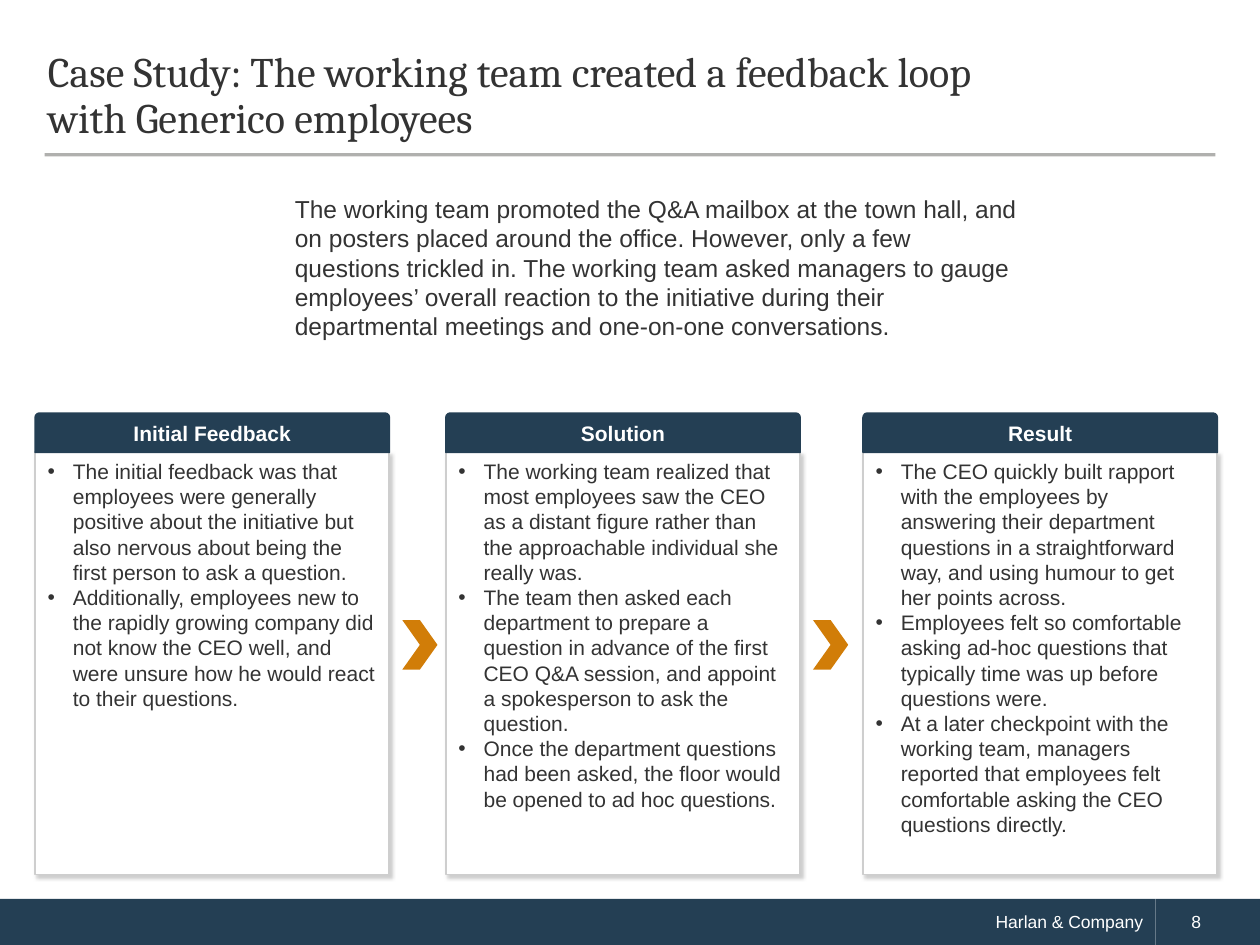
from lxml import etree
from pptx import Presentation
from pptx.dml.color import RGBColor
from pptx.enum import shapes, text
from pptx.oxml import parse_xml
from pptx.oxml.ns import qn
from pptx.util import Cm, Pt

NAVY = RGBColor(0x24, 0x3F, 0x54)
ORANGE = RGBColor(0xD1, 0x7D, 0x08)
INK = RGBColor(0x33, 0x33, 0x33)
RULE = RGBColor(0x45, 0x43, 0x3E)
EDGE = RGBColor(0xCE, 0xCE, 0xCE)
WHITE = RGBColor(0xFF, 0xFF, 0xFF)

KIND = shapes.MSO_SHAPE
ALIGN = text.PP_ALIGN
MIDDLE = text.MSO_ANCHOR.MIDDLE
TOP = text.MSO_ANCHOR.TOP
WIDTH = 7.14

TITLE = ("Case Study: The working team created a feedback loop ",
         "with Generico employees")
INTRO = ("The working team promoted the Q&A mailbox at the town hall, and on "
         "posters placed around the office. However, only a few questions "
         "trickled in. The working team asked managers to gauge employees’ "
         "overall reaction to the initiative during their departmental "
         "meetings and one-on-one conversations.")
CARDS = (
    (0.71, "Initial Feedback", (
        "The initial feedback was that employees were generally positive "
        "about the initiative but also nervous about being the first person "
        "to ask a question.",
        "Additionally, employees new to the rapidly growing company did not "
        "know the CEO well, and were unsure how he would react to their "
        "questions.")),
    (8.99, "Solution", (
        "The working team realized that most employees saw the CEO as a "
        "distant figure rather than the approachable individual she really "
        "was.",
        "The team then asked each department to prepare a question in "
        "advance of the first CEO Q&A session, and appoint a spokesperson "
        "to ask the question.",
        "Once the department questions had been asked, the floor would be "
        "opened to ad hoc questions.")),
    (17.4, "Result", (
        "The CEO quickly built rapport with the employees by answering their "
        "department questions in a straightforward way, and using humour to "
        "get her points across.",
        "Employees felt so comfortable asking ad-hoc questions that "
        "typically time was up before questions were.",
        "At a later checkpoint with the working team, managers reported that "
        "employees felt comfortable asking the CEO questions directly.")),
)


def write(para, words, size, color, font="Arial", bold=False):
    run = para.add_run()
    run.text = words
    run.font.name = font
    run.font.size = Pt(size)
    run.font.bold = bold
    run.font.color.rgb = color


def indent(para, left, hang=0, mark=None):
    props = para._p.get_or_add_pPr()
    props.set("marL", str(Cm(left)))
    props.set("indent", str(Cm(-hang)))
    if mark:
        etree.SubElement(props, qn("a:buFont")).set("typeface", "Arial")
        etree.SubElement(props, qn("a:buChar")).set("char", mark)
    else:
        etree.SubElement(props, qn("a:buNone"))


def place(item, left, top, width, height):
    item.left, item.top = Cm(left), Cm(top)
    item.width, item.height = Cm(width), Cm(height)


def frame(item, anchor):
    body = item.text_frame
    body.word_wrap = True
    body.auto_size = text.MSO_AUTO_SIZE.NONE
    body.vertical_anchor = anchor
    return body


def block(slide, kind, box, fill, line=None):
    item = slide.shapes.add_shape(kind, *map(Cm, box))
    item.shadow.inherit = False
    item.fill.solid()
    item.fill.fore_color.rgb = fill
    if line is None:
        item.line.fill.background()
    else:
        item.line.color.rgb = line
        item.line.width = Pt(1)
    return item


def shade(item):
    item._element.spPr.find(qn("a:effectLst")).append(parse_xml(
        '<a:outerShdw xmlns:a="http://schemas.openxmlformats.org/drawingml/2006/main"'
        f' blurRad="{Pt(2)}" dist="{Pt(2)}" dir="3600000" algn="tl"'
        f' rotWithShape="0"><a:srgbClr val="{EDGE}"/></a:outerShdw>'))


def footer(slide, left, width, words, align, pad):
    item = block(slide, KIND.RECTANGLE, (left, 18.12, width, 0.93), NAVY)
    para = frame(item, MIDDLE).paragraphs[0]
    para.alignment = align
    indent(para, pad)
    write(para, words, 10, WHITE)


def rule(slide):
    line = slide.shapes.add_connector(
        shapes.MSO_CONNECTOR.STRAIGHT, Cm(0.9), Cm(3.12), Cm(24.5), Cm(3.12))
    line.line.color.rgb = RULE
    line.line.width = Pt(1.75)
    props = line._element.spPr
    tint = next(props.iter(qn("a:srgbClr")))
    etree.SubElement(tint, qn("a:alpha")).set("val", "42000")
    etree.SubElement(props, qn("a:effectLst"))


def title(slide):
    item = slide.shapes.title
    place(item, 0.71, 0.74, 23.95, 2.39)
    para = frame(item, MIDDLE).paragraphs[0]
    para.alignment = ALIGN.LEFT
    para.line_spacing = Pt(26)
    write(para, TITLE[0], 24, INK, "Cambria")
    para.add_line_break()
    write(para, TITLE[1], 24, INK, "Cambria")


def intro(slide):
    item = slide.placeholders[1]
    place(item, 5.69, 3.78, 15.19, 3.73)
    para = frame(item, TOP).paragraphs[0]
    para.space_before = Pt(0)
    indent(para, 0)
    write(para, INTRO, 14, INK)


def card(slide, left, head, points):
    item = block(slide, KIND.RECTANGLE, (left, 9.12, WIDTH, 8.51), WHITE, EDGE)
    shade(item)
    body = frame(item, TOP)
    for pos, point in enumerate(points):
        para = body.add_paragraph() if pos else body.paragraphs[0]
        para.alignment = ALIGN.LEFT
        indent(para, 0.51, 0.51, "•")
        write(para, point, 12, INK)
    tab = block(slide, KIND.ROUND_2_SAME_RECTANGLE,
                (left, 8.33, WIDTH, 0.79), NAVY, NAVY)
    tab.adjustments[0] = 0.11
    para = frame(tab, MIDDLE).paragraphs[0]
    para.alignment = ALIGN.CENTER
    write(para, head, 12, WHITE, bold=True)


def main():
    deck = Presentation()
    deck.slide_width, deck.slide_height = Cm(25.4), Cm(19.05)
    slide = deck.slides.add_slide(deck.slide_layouts[1])
    footer(slide, 0, 23.29, "Harlan & Company", ALIGN.RIGHT, 0.74)
    footer(slide, 23.29, 2.11, "8", ALIGN.LEFT, 0.48)
    rule(slide)
    intro(slide)
    title(slide)
    for left, head, points in CARDS:
        card(slide, left, head, points)
    for left, *_ in CARDS[:-1]:
        block(slide, KIND.CHEVRON, (left + WIDTH + 0.26, 12.5, 0.71, 1), ORANGE)
    deck.save("out.pptx")


if __name__ == "__main__":
    main()
